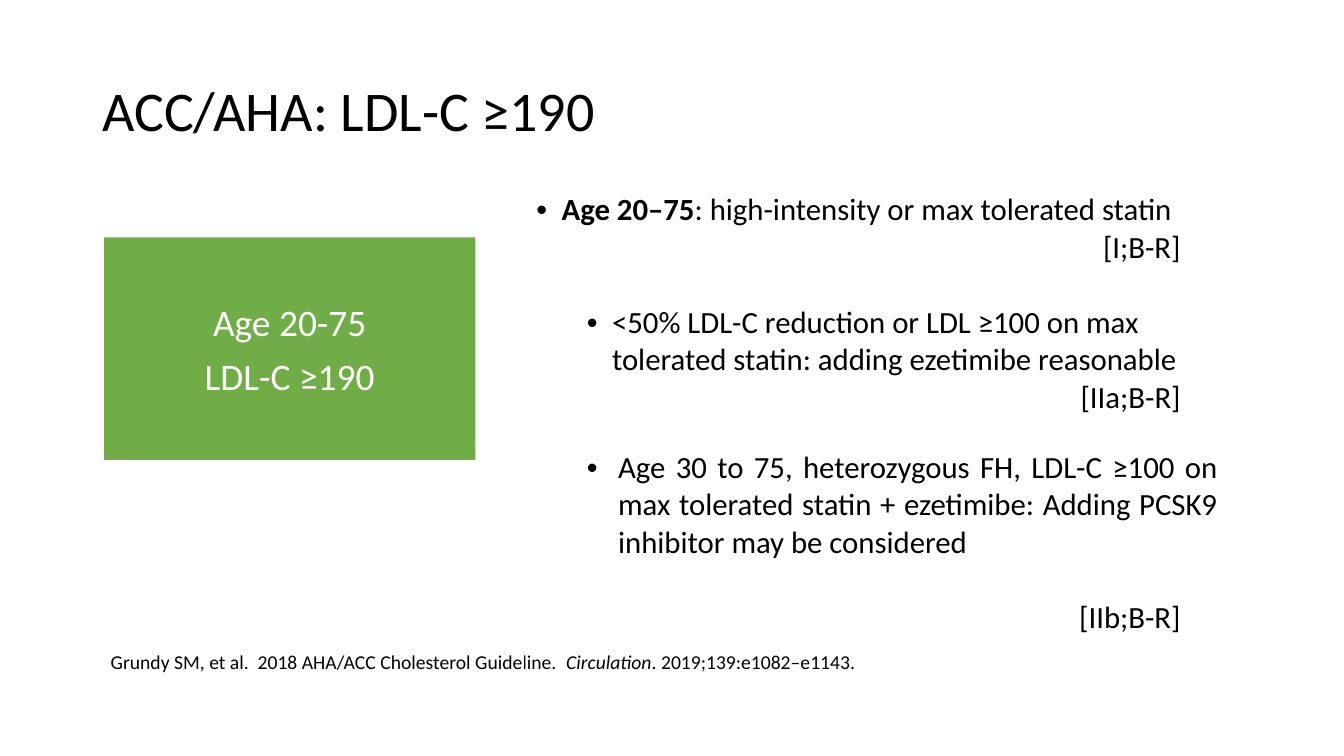
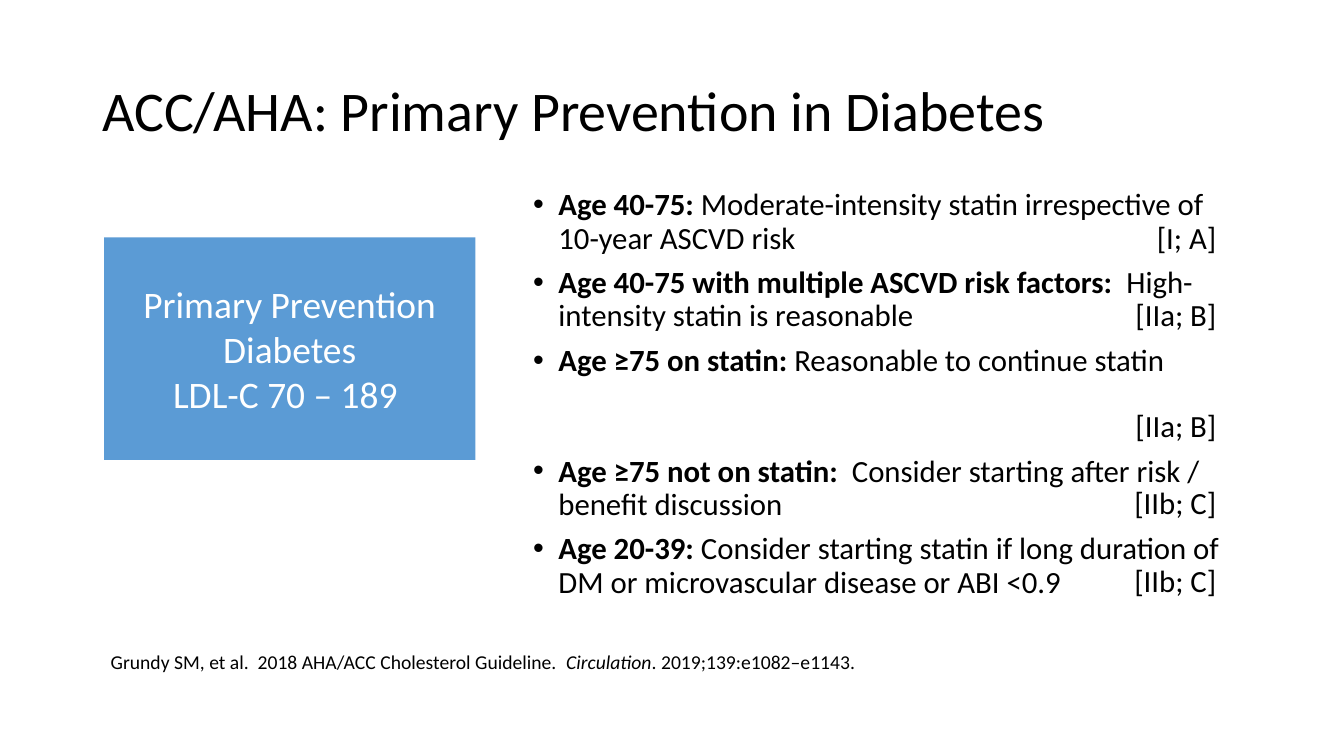
from dataclasses import dataclass

from lxml.etree import SubElement
from pptx import Presentation
from pptx.dml.color import RGBColor
from pptx.enum.shapes import MSO_SHAPE
from pptx.enum.text import MSO_ANCHOR, PP_ALIGN
from pptx.oxml.ns import qn
from pptx.presentation import Presentation as Deck
from pptx.slide import Slide
from pptx.text.text import TextFrame, _Paragraph as Paragraph
from pptx.util import Inches, Length, Pt

FONT = "Calibri"
BLACK = RGBColor(0x00, 0x00, 0x00)
WHITE = RGBColor(0xFF, 0xFF, 0xFF)
GREEN = RGBColor(0x70, 0xAD, 0x47)
BLUE = RGBColor(0x5B, 0x9B, 0xD5)

SLIDE_WIDTH, SLIDE_HEIGHT = Inches(13.33), Inches(7.5)
COLUMNS, ROWS = 160, 90
POINTS_PER_ROW = 6
TITLE_SIZE, BODY_SIZE, CARD_SIZE, SOURCE_SIZE = 40, 22, 26.7, 14
TIGHT_SPACING = 0.9
LINE_ROWS = 3.95
GAP_POINTS = 8
BLANK_LINE_POINTS = 27
CELL_SIDE, CELL_EDGE = 0.13, 0.07
EVIDENCE_TAB = 6.39


@dataclass(frozen=True)
class Frame:
    """A rectangle in columns and rows of the slide grid."""

    column: float
    row: float
    columns: float
    rows: float

    def box(self) -> tuple[int, int, int, int]:
        """Return left, top, width and height."""
        return (across(self.column), down(self.row), across(self.columns), down(self.rows))


@dataclass(frozen=True)
class Run:
    """A stretch of text in one style."""

    text: str
    bold: bool = False
    italic: bool = False


@dataclass(frozen=True)
class Line:
    """A paragraph with its layout; a margin above zero gives it a bullet."""

    runs: tuple[Run, ...]
    margin: float = 0
    hanging: float = 0.25
    right_tab: float = 0
    align: PP_ALIGN = PP_ALIGN.LEFT
    before: float = 0
    after: float = 0
    spacing: float = 1


@dataclass(frozen=True)
class GuidelineRow:
    """A table row with its height in grid rows."""

    rows: float
    lines: tuple[Line, ...] = ()


@dataclass(frozen=True)
class Recommendation:
    """A bulleted recommendation with its evidence class."""

    group: str
    advice: str
    evidence: str
    text_lines: int = 2
    blank_lines: int = 0


@dataclass(frozen=True)
class Card:
    """The coloured card that names the patient group."""

    lines: tuple[str, ...]
    color: RGBColor
    gap: float = 0


TITLE_FRAME = Frame(11, 4.8, 138, 17.4)
BODY_FRAME = Frame(62.3, 21.95, 84.2, 54)
CARD_FRAME = Frame(12.4, 28.25, 44.2, 26.5)
SOURCE_FRAME = Frame(12, 76.8, 130, 4.1)
EVIDENCE_COLUMN, EVIDENCE_COLUMNS = 132, 12.8
BODY_INSET_ROWS = 0.6

SOURCE = Line((
    Run("Grundy SM, et al.  2018 AHA/ACC Cholesterol Guideline.  "),
    Run("Circulation", italic=True),
    Run(". 2019;139:e1082–e1143."),
))


def tabbed_evidence(text: str, before: float = 0) -> Line:
    """Return an evidence class set at the right tab."""
    return Line((Run(f"\t{text}"),), right_tab=EVIDENCE_TAB, before=before)


GUIDELINE_ROWS = (
    GuidelineRow(30.7, (
        Line((Run("Age 20–75", bold=True),
              Run(": high-intensity or max tolerated statin")), margin=0.25),
        tabbed_evidence("[I;B-R]"),
        Line((Run("<50% LDL-C reduction or LDL ≥100 on max tolerated statin: "
                  "adding ezetimibe reasonable"),), margin=0.75, before=BLANK_LINE_POINTS),
        tabbed_evidence("[IIa;B-R]"),
    )),
    GuidelineRow(22.9, (
        Line((Run("Age 30 to 75, heterozygous FH, LDL-C ≥100 on max tolerated statin "
                  "+ ezetimibe: Adding PCSK9 inhibitor may be considered"),),
             margin=0.81, hanging=0.31, align=PP_ALIGN.JUSTIFY),
        tabbed_evidence("[IIb;B-R]", before=BLANK_LINE_POINTS),
    )),
    GuidelineRow(2.6),
    GuidelineRow(4.3),
)

RECOMMENDATIONS = (
    Recommendation("Age 40-75: ", "Moderate-intensity statin irrespective of "
                   "10-year ASCVD risk", "[I; A]"),
    Recommendation("Age 40-75 with multiple ASCVD risk factors:  ",
                   "High-intensity statin is reasonable", "[IIa; B]"),
    Recommendation("Age ≥75 on statin: ", "Reasonable to continue statin",
                   "[IIa; B]", text_lines=1, blank_lines=2),
    Recommendation("Age ≥75 not on statin:  ", "Consider starting after risk / "
                   "benefit discussion", "[IIb; C]"),
    Recommendation("Age 20-39: ", "Consider starting statin if long duration of DM or "
                   "microvascular disease or ABI <0.9", "[IIb; C]"),
)


def across(columns: float) -> Length:
    """Convert grid columns to a length."""
    return Length(round(SLIDE_WIDTH * columns / COLUMNS))


def down(rows: float) -> Length:
    """Convert grid rows to a length."""
    return Length(round(SLIDE_HEIGHT * rows / ROWS))


def write_line(paragraph: Paragraph, line: Line, size: float, color: RGBColor) -> None:
    """Fill and format one paragraph."""
    paragraph.alignment = line.align
    paragraph.line_spacing = line.spacing
    paragraph.space_before = Pt(line.before)
    paragraph.space_after = Pt(line.after)
    for part in line.runs:
        run = paragraph.add_run()
        run.text = part.text
        run.font.name = FONT
        run.font.size = Pt(size)
        run.font.bold = part.bold
        run.font.italic = part.italic
        run.font.color.rgb = color
    properties = paragraph._p.get_or_add_pPr()
    if line.margin:
        properties.set("marL", str(Inches(line.margin)))
        properties.set("indent", str(-Inches(line.hanging)))
        SubElement(properties, qn("a:buFont")).set("typeface", "Arial")
        SubElement(properties, qn("a:buChar")).set("char", "•")
    if line.right_tab:
        tab = SubElement(SubElement(properties, qn("a:tabLst")), qn("a:tab"))
        tab.set("pos", str(Inches(line.right_tab)))
        tab.set("algn", "r")


def write_lines(text_frame: TextFrame, lines: tuple[Line, ...], size: float,
                color: RGBColor = BLACK) -> None:
    """Write a sequence of paragraphs into a text frame."""
    text_frame.word_wrap = True
    for index, line in enumerate(lines):
        paragraph = text_frame.add_paragraph() if index else text_frame.paragraphs[0]
        write_line(paragraph, line, size, color)


def set_insets(text_frame: TextFrame, inset: Length) -> None:
    """Give a text frame the same inset on every side."""
    text_frame.margin_left = text_frame.margin_right = inset
    text_frame.margin_top = text_frame.margin_bottom = inset


def add_text(slide: Slide, frame: Frame, lines: tuple[Line, ...], size: float) -> TextFrame:
    """Add a text box and return its text frame."""
    text_frame = slide.shapes.add_textbox(*frame.box()).text_frame
    write_lines(text_frame, lines, size)
    return text_frame


def add_card(slide: Slide, card: Card) -> None:
    """Add the coloured patient group card."""
    shape = slide.shapes.add_shape(MSO_SHAPE.RECTANGLE, *CARD_FRAME.box())
    shape.shadow.inherit = False
    shape.fill.solid()
    shape.fill.fore_color.rgb = card.color
    shape.line.fill.background()
    set_insets(shape.text_frame, Inches(0.14))
    shape.text_frame.vertical_anchor = MSO_ANCHOR.MIDDLE
    lines = tuple(
        Line((Run(text),), align=PP_ALIGN.CENTER, before=card.gap if index else 0)
        for index, text in enumerate(card.lines)
    )
    write_lines(shape.text_frame, lines, CARD_SIZE, WHITE)


def add_guideline_slide(presentation: Deck, title: str, card: Card) -> Slide:
    """Add a slide with the shared title, card and source."""
    slide = presentation.slides.add_slide(presentation.slide_layouts[6])
    heading = Line((Run(title),), spacing=TIGHT_SPACING)
    text_frame = add_text(slide, TITLE_FRAME, (heading,), TITLE_SIZE)
    text_frame.vertical_anchor = MSO_ANCHOR.MIDDLE
    add_card(slide, card)
    add_text(slide, SOURCE_FRAME, (SOURCE,), SOURCE_SIZE)
    return slide


def add_guideline_table(slide: Slide, guideline_rows: tuple[GuidelineRow, ...]) -> None:
    """Add the one-column table of guideline statements."""
    height = sum(guideline_row.rows for guideline_row in guideline_rows)
    frame = Frame(BODY_FRAME.column, BODY_FRAME.row, BODY_FRAME.columns, height)
    table = slide.shapes.add_table(len(guideline_rows), 1, *frame.box()).table
    table.first_row = table.horz_banding = False
    for index, guideline_row in enumerate(guideline_rows):
        table.rows[index].height = down(guideline_row.rows)
        cell = table.cell(index, 0)
        cell.fill.background()
        cell.margin_left = cell.margin_right = Inches(CELL_SIDE)
        cell.margin_top = cell.margin_bottom = Inches(CELL_EDGE)
        write_lines(cell.text_frame, guideline_row.lines, BODY_SIZE)


def add_recommendations(slide: Slide, recommendations: tuple[Recommendation, ...]) -> None:
    """Add the bulleted list with an evidence class on each last line."""
    lines = tuple(
        Line((Run(item.group, bold=True), Run(item.advice)), margin=0.25,
             before=GAP_POINTS if index else 0,
             after=item.blank_lines * LINE_ROWS * POINTS_PER_ROW, spacing=TIGHT_SPACING)
        for index, item in enumerate(recommendations)
    )
    add_text(slide, BODY_FRAME, lines, BODY_SIZE)
    row = BODY_FRAME.row + BODY_INSET_ROWS
    for item in recommendations:
        row += (item.text_lines + item.blank_lines) * LINE_ROWS
        frame = Frame(EVIDENCE_COLUMN, row - LINE_ROWS, EVIDENCE_COLUMNS, LINE_ROWS)
        evidence = Line((Run(item.evidence),), align=PP_ALIGN.RIGHT, spacing=TIGHT_SPACING)
        set_insets(add_text(slide, frame, (evidence,), BODY_SIZE), Pt(0))
        row += GAP_POINTS / POINTS_PER_ROW


def main() -> None:
    """Build and save the presentation."""
    presentation = Presentation()
    presentation.slide_width, presentation.slide_height = SLIDE_WIDTH, SLIDE_HEIGHT

    slide = add_guideline_slide(presentation, "ACC/AHA: LDL-C ≥190",
                                Card(("Age 20-75", "LDL-C ≥190"), GREEN, gap=6))
    add_guideline_table(slide, GUIDELINE_ROWS)

    slide = add_guideline_slide(
        presentation, "ACC/AHA: Primary Prevention in Diabetes",
        Card(("Primary Prevention", "Diabetes", "LDL-C 70 – 189 "), BLUE))
    add_recommendations(slide, RECOMMENDATIONS)

    presentation.save("out.pptx")


if __name__ == "__main__":
    main()
